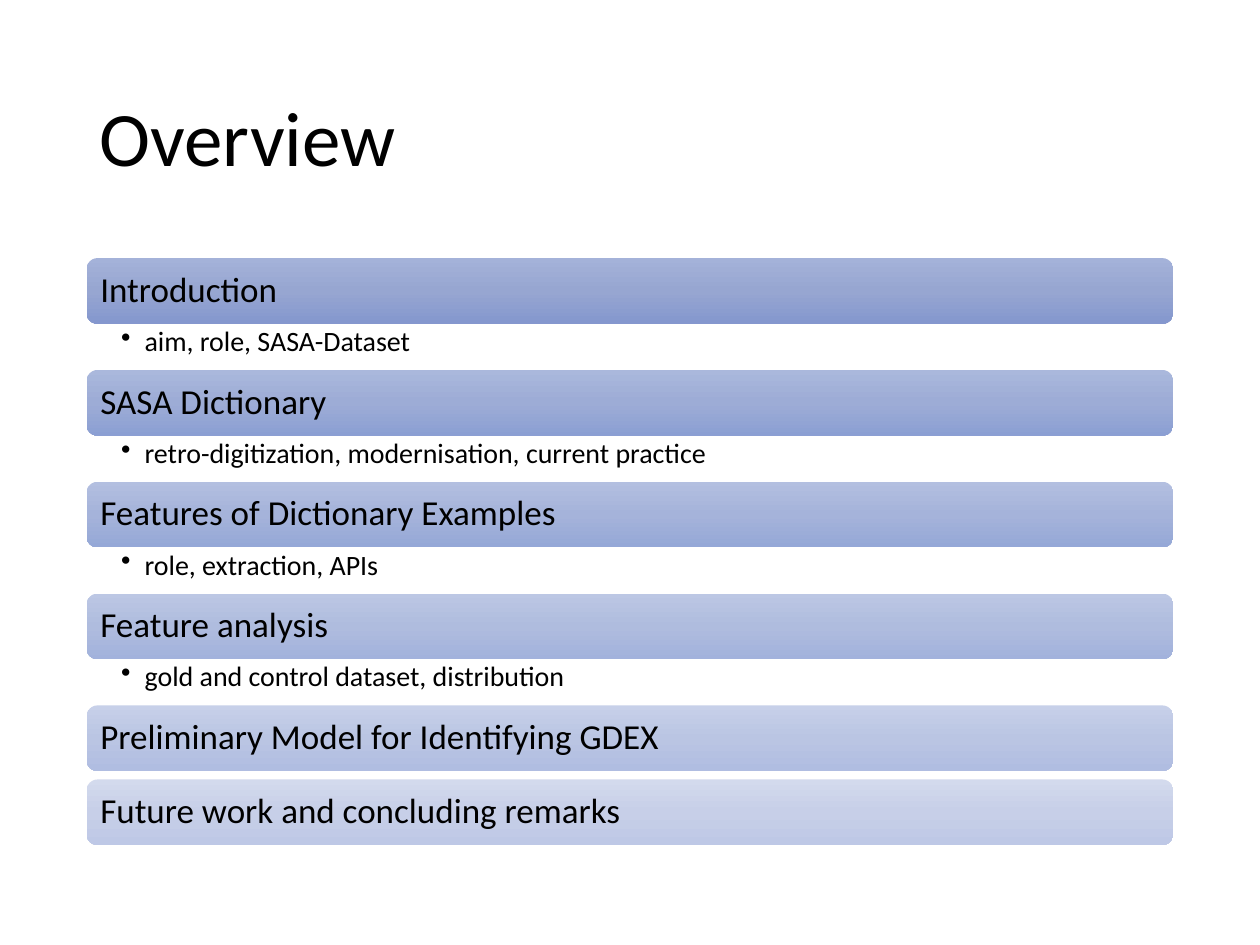
import copy

import pptx
import pptx.util
import pptx.dml.color
import pptx.enum.shapes
import pptx.enum.text
import pptx.oxml
import pptx.oxml.ns

Pt = pptx.util.Pt
RGBColor = pptx.dml.color.RGBColor
MIDDLE = pptx.enum.text.MSO_ANCHOR.MIDDLE

BLACK = RGBColor(0x00, 0x00, 0x00)
LEFT, WIDTH = 49.5, 621
FIRST_TOP, BAR_HEIGHT, DETAIL_HEIGHT, BAR_GAP = 147.5, 37.5, 26.4, 4.8

# Heading, detail line, gradient from top to bottom
SECTIONS = [
    ("Introduction", "aim, role, SASA-Dataset",
     (RGBColor(0xA4, 0xB2, 0xD9), RGBColor(0x97, 0xA6, 0xD1), RGBColor(0x84, 0x97, 0xCE))),
    ("SASA Dictionary", "retro-digitization, modernisation, current practice",
     (RGBColor(0xAA, 0xB8, 0xDC), RGBColor(0x9D, 0xAC, 0xD6), RGBColor(0x8B, 0x9F, 0xD3))),
    ("Features of Dictionary Examples", "role, extraction, APIs",
     (RGBColor(0xB3, 0xBF, 0xE0), RGBColor(0xA5, 0xB3, 0xDA), RGBColor(0x95, 0xA8, 0xD7))),
    ("Feature analysis", "gold and control dataset, distribution",
     (RGBColor(0xBC, 0xC7, 0xE4), RGBColor(0xAF, 0xBC, 0xDE), RGBColor(0xA2, 0xB2, 0xDC))),
    ("Preliminary Model for Identifying GDEX", None,
     (RGBColor(0xC7, 0xD0, 0xE9), RGBColor(0xBA, 0xC5, 0xE3), RGBColor(0xB0, 0xBD, 0xE1))),
    ("Future work and concluding remarks", None,
     (RGBColor(0xD3, 0xDA, 0xED), RGBColor(0xC7, 0xCF, 0xE8), RGBColor(0xBE, 0xC8, 0xE6))),
]


def write_line(frame, text, size, bulleted=False):
    frame.word_wrap = True
    frame.text = text
    paragraph = frame.paragraphs[0]
    paragraph.alignment = pptx.enum.text.PP_ALIGN.LEFT
    paragraph.line_spacing = 0.9
    if bulleted:
        properties = paragraph._p.get_or_add_pPr()
        properties.set("marL", str(Pt(13.5)))
        properties.set("indent", str(Pt(-13.5)))
        bullet = pptx.oxml.parse_xml(
            f'<a:buChar {pptx.oxml.ns.nsdecls("a")} char="•"/>')
        properties.append(bullet)
    font = paragraph.runs[0].font
    font.name = "Calibri"
    font.size = Pt(size)
    font.color.rgb = BLACK


def fill_downwards(shape, colors):
    """Fill the shape with a three-stop gradient running from top to bottom."""
    shape.fill.gradient()
    shape.fill.gradient_angle = 270
    stop_list = shape._element.spPr.find(".//" + pptx.oxml.ns.qn("a:gsLst"))
    stop_list.insert(1, copy.deepcopy(stop_list[0]))
    for stop, position, color in zip(shape.fill.gradient_stops, (0, 0.5, 1), colors):
        stop.position = position
        stop.color.rgb = color


presentation = pptx.Presentation()
presentation.slide_width, presentation.slide_height = Pt(720), Pt(540)
slide = presentation.slides.add_slide(presentation.slide_layouts[5])

title = slide.shapes.title
title.left, title.top, title.width, title.height = Pt(LEFT), Pt(28.8), Pt(WIDTH), Pt(104.4)
write_line(title.text_frame, "Overview", 44)
title.text_frame.vertical_anchor = MIDDLE

top = FIRST_TOP
for heading, detail, colors in SECTIONS:
    bar = slide.shapes.add_shape(
        pptx.enum.shapes.MSO_SHAPE.ROUNDED_RECTANGLE,
        Pt(LEFT), Pt(top), Pt(WIDTH), Pt(BAR_HEIGHT))
    bar.shadow.inherit = False
    bar.line.fill.background()
    fill_downwards(bar, colors)
    heading_frame = bar.text_frame
    write_line(heading_frame, heading, 20)
    heading_frame.vertical_anchor = MIDDLE
    # The rounded corners already inset the text by about 1.8 pt
    heading_frame.margin_left = heading_frame.margin_right = Pt(6)
    top += BAR_HEIGHT

    if detail:
        detail_box = slide.shapes.add_textbox(
            Pt(LEFT), Pt(top), Pt(WIDTH), Pt(DETAIL_HEIGHT))
        detail_frame = detail_box.text_frame
        detail_frame.margin_left, detail_frame.margin_right = Pt(19.7), Pt(11.5)
        detail_frame.margin_top = detail_frame.margin_bottom = Pt(2)
        write_line(detail_frame, detail, 16, bulleted=True)
        top += DETAIL_HEIGHT
    else:
        top += BAR_GAP

presentation.save("out.pptx")
